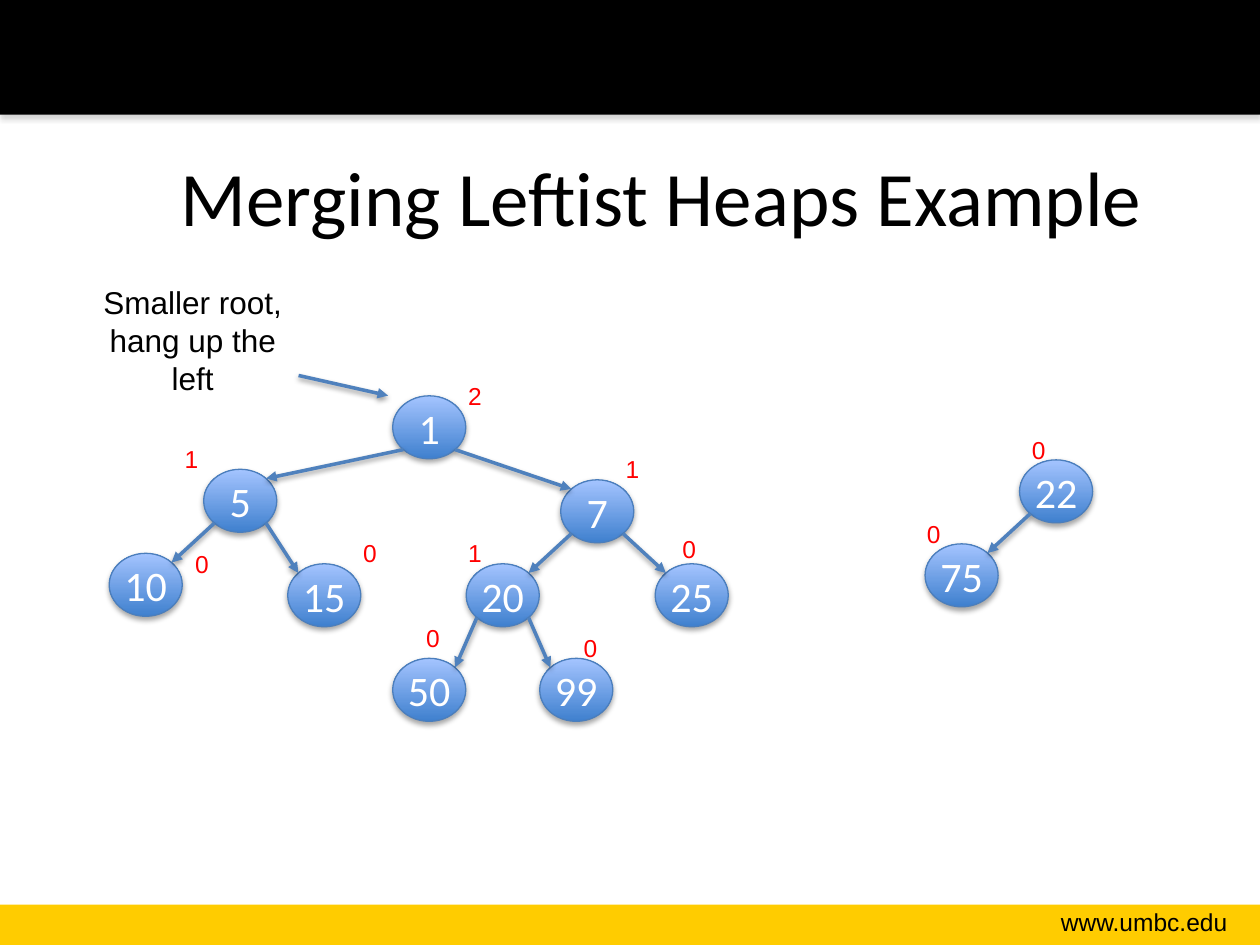
from dataclasses import dataclass

from lxml import etree
from pptx import Presentation
from pptx.dml.color import RGBColor
from pptx.enum.shapes import MSO_CONNECTOR, MSO_SHAPE
from pptx.enum.text import MSO_ANCHOR, PP_ALIGN
from pptx.oxml.ns import qn
from pptx.util import Inches, Pt

RECT, OVAL = MSO_SHAPE.RECTANGLE, MSO_SHAPE.OVAL
LINE = MSO_CONNECTOR.STRAIGHT
TOP, MIDDLE = MSO_ANCHOR.TOP, MSO_ANCHOR.MIDDLE
LEFT, CENTER, RIGHT = PP_ALIGN.LEFT, PP_ALIGN.CENTER, PP_ALIGN.RIGHT


@dataclass(frozen=True)
class Theme:
    """Colours, fonts and type sizes of the deck."""
    black: str = "000000"
    white: str = "FFFFFF"
    gold: str = "FFCC00"
    red: str = "FF0000"
    gray: str = "808080"
    low: str = "3F80CE"
    high: str = "A4C4FF"
    rim: str = "4B7EBC"
    edge: str = "4F81BD"
    head: str = "Calibri"
    body: str = "Arial"
    title: int = 44
    key: int = 24
    note: int = 18
    small: int = 14


class Deck:
    """Draws heap diagrams on a grid of twelfths of an inch."""

    cell = 1 / 12
    left, top = 0.4 / 12, 0.7 / 12
    wide, high = 0.58, 0.5

    def __init__(self, theme):
        """Open a deck with one blank slide."""
        self.theme = theme
        self.deck = Presentation()
        self.deck.slide_width, self.deck.slide_height = Inches(10), Inches(7.5)
        self.slide = self.deck.slides.add_slide(self.deck.slide_layouts[6])
        self.shapes = self.slide.shapes

    def spot(self, col, row):
        """Turn a column and row into inches."""
        return self.left + col * self.cell, self.top + row * self.cell

    def shade(self, shape, color, alpha, dist):
        """Give a shape a soft shadow straight below it."""
        group = etree.SubElement(shape._element.spPr, qn("a:effectLst"))
        cast = etree.SubElement(group, qn("a:outerShdw"), blurRad=str(Pt(3.1)),
                                dist=str(Pt(dist)), dir="5400000", rotWithShape="0")
        tint = etree.SubElement(cast, qn("a:srgbClr"), val=color)
        etree.SubElement(tint, qn("a:alpha"), val=str(alpha * 1000))

    def label(self, shape, text, size, font, color, align, anchor, wrap):
        """Set the text of a shape in one style."""
        frame = shape.text_frame
        frame.word_wrap, frame.vertical_anchor = wrap, anchor
        para = frame.paragraphs[0]
        para.text, para.alignment = text, align
        para.font.size, para.font.name = Pt(size), font
        para.font.color.rgb = RGBColor.from_string(color)

    def band(self, top, high, color, shadow=False):
        """Draw a bar across the slide."""
        bar = self.shapes.add_shape(RECT, 0, Inches(top), self.deck.slide_width, Inches(high))
        bar.fill.solid()
        bar.fill.fore_color.rgb = RGBColor.from_string(color)
        bar.line.fill.background()
        if shadow:
            self.shade(bar, self.theme.gray, 35, 1.8)
        else:
            bar.shadow.inherit = False

    def text(self, box, text, size, font, color, align=LEFT, anchor=TOP):
        """Add a wrapped text box."""
        shape = self.shapes.add_textbox(*map(Inches, box))
        self.label(shape, text, size, font, color, align, anchor, True)

    def node(self, key, col, row):
        """Draw a heap node."""
        look = self.theme
        x, y = self.spot(col, row)
        oval = self.shapes.add_shape(OVAL, *map(Inches, (x, y, self.wide, self.high)))
        oval.fill.gradient()
        oval.fill.gradient_angle = 90
        for stop, color in zip(oval.fill.gradient_stops, (look.low, look.high)):
            stop.color.rgb = RGBColor.from_string(color)
        oval.line.color.rgb = RGBColor.from_string(look.rim)
        oval.line.width = Pt(0.75)
        self.shade(oval, look.black, 35, 1.8)
        self.label(oval, str(key), look.key, look.head, look.white, CENTER, MIDDLE, False)

    def rank(self, value, col, row):
        """Put a null path length beside a node."""
        look = self.theme
        self.text((*self.spot(col, row), 0.29, 0.34), str(value), look.small, look.body, look.red)

    def arrow(self, start, end):
        """Draw an arrow between two points in inches."""
        line = self.shapes.add_connector(LINE, *map(Inches, (*start, *end)))
        line.line.color.rgb = RGBColor.from_string(self.theme.edge)
        line.line.width = Pt(2)
        etree.SubElement(line._element.spPr.find(qn("a:ln")), qn("a:tailEnd"), type="triangle")
        self.shade(line, self.theme.black, 38, 1.6)

    def rim(self, place, side, fall):
        """Find the diagonal point on the rim of a node."""
        x, y = self.spot(*place)
        reach = 0.5 ** 0.5
        return (x + self.wide / 2 * (1 + side * reach),
                y + self.high / 2 * (1 + fall * reach))

    def link(self, parent, child):
        """Join a parent node to its child."""
        side = 1 if child[0] > parent[0] else -1
        self.arrow(self.rim(parent, side, 1), self.rim(child, -side, -1))


NODES = {
    1: (37, 37), 5: (19, 44), 7: (53, 45), 10: (10, 52), 15: (27, 53),
    20: (44, 53), 25: (62, 53), 50: (37, 62), 99: (51, 62),
    22: (96.7, 43.1), 75: (87.7, 51.1),
}
EDGES = {1: (5, 7), 5: (10, 15), 7: (20, 25), 20: (50, 99), 22: (75,)}
RANKS = [
    (2, 43, 35), (1, 16, 41), (1, 58, 42), (0, 17, 51), (0, 33, 50), (1, 43, 50),
    (0, 63.4, 49.6), (0, 39, 58), (0, 54, 59), (0, 96.7, 40.1), (0, 86.7, 48.1),
]


def main():
    """Build the leftist heap slide."""
    look = Theme()
    deck = Deck(look)
    deck.band(7.18, 0.32, look.gold)
    deck.band(0, 0.91, look.black, shadow=True)
    deck.text((7.85, 7.15, 1.99, 0.34), "www.umbc.edu", look.small, look.body, look.black, RIGHT)
    deck.text((0.75, 0.93, 9, 1.25), "Merging Leftist Heaps Example",
              look.title, look.head, look.black, CENTER, MIDDLE)
    for key, place in NODES.items():
        deck.node(key, *place)
    for key, kids in EDGES.items():
        for kid in kids:
            deck.link(NODES[key], NODES[kid])
    for rank in RANKS:
        deck.rank(*rank)
    deck.text((0.61, 2.2, 1.84, 1.01), "Smaller root, hang up the left",
              look.note, look.body, look.black, CENTER)
    deck.arrow((2.37, 2.98), (3.08, 3.14))
    deck.deck.save("out.pptx")


if __name__ == "__main__":
    main()
